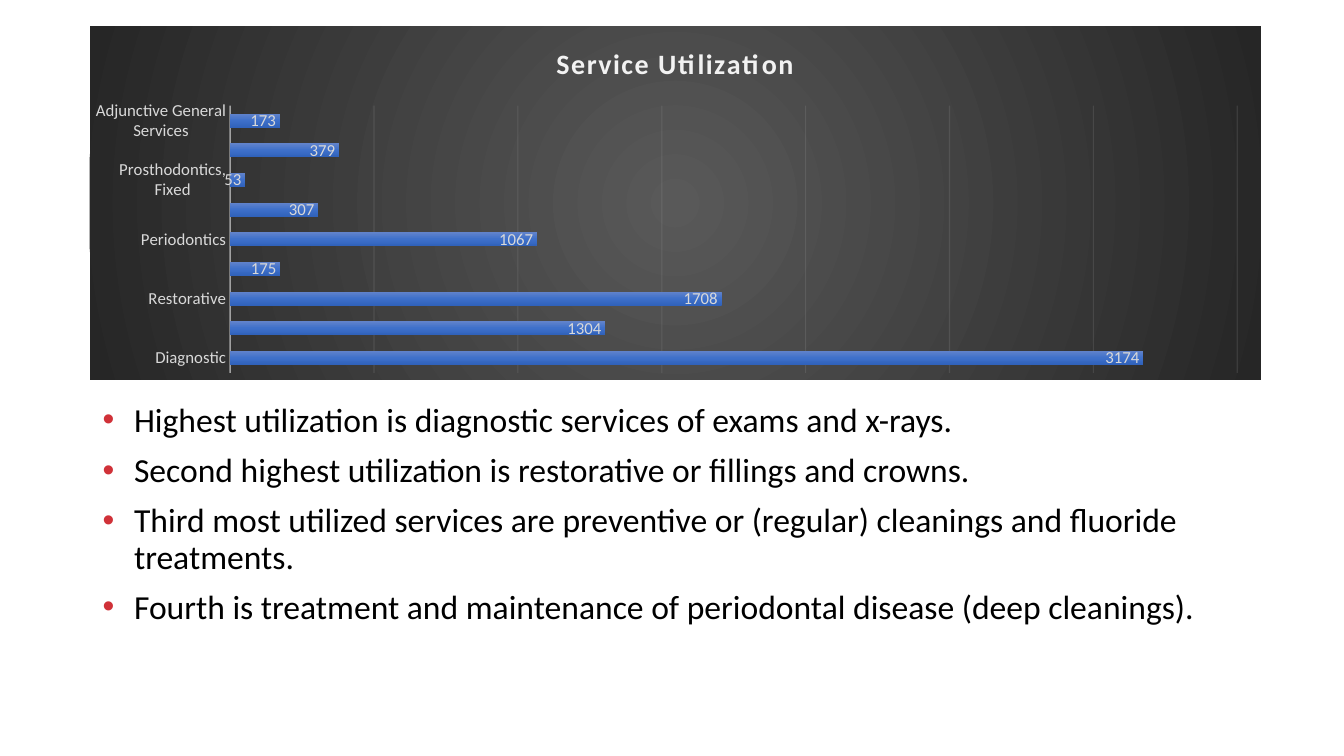
from lxml import etree
from pptx import Presentation
from pptx.chart.data import CategoryChartData
from pptx.dml.color import RGBColor
from pptx.enum.chart import XL_CHART_TYPE as ChartType, XL_LABEL_POSITION as LabelPos
from pptx.enum.chart import XL_TICK_LABEL_POSITION as TickLabels, XL_TICK_MARK as TickMark
from pptx.oxml import parse_xml
from pptx.oxml.ns import nsdecls, qn
from pptx.util import Pt

FONT = "Calibri"
COLORS = {
    "text": "000000", "bullet": "D03138", "label": "D9D9D9", "light": "F2F2F2",
    "panel_center": "595959", "panel_edge": "262626",
    "bar_top": "6183CB", "bar_middle": "3E70CA", "bar_bottom": "3062BB",
}
SERVICES = [
    ("Diagnostic", 3174),
    ("Preventive", 1304),
    ("Restorative", 1708),
    ("Endodontics", 175),
    ("Periodontics", 1067),
    ("Prosthodontics, Removable", 307),
    ("Prosthodontics, Fixed", 53),
    ("Oral & Maxillofacial Surgery", 379),
    ("Adjunctive General Services", 173),
]
FINDINGS = [
    "Highest utilization is diagnostic services of exams and x-rays.",
    "Second highest utilization is restorative or fillings and crowns.",
    "Third most utilized services are preventive or (regular) cleanings and fluoride treatments.",
    "Fourth is treatment and maintenance of periodontal disease (deep cleanings).",
]


def set_font(font, size, color, bold=False):
    """Apply the slide's typeface with a size, colour and weight."""
    font.name = FONT
    font.size = Pt(size)
    font.bold = bold
    font.color.rgb = RGBColor.from_string(COLORS[color])


def gradient(names, direction):
    """Return a gradient fill with evenly spaced stops."""
    step = 100000 // (len(names) - 1)
    stops = "".join(
        f'<a:gs pos="{i * step}"><a:srgbClr val="{COLORS[name]}"/></a:gs>'
        for i, name in enumerate(names))
    return parse_xml(f'<a:gradFill {nsdecls("a")} rotWithShape="1">'
                     f"<a:gsLst>{stops}</a:gsLst>{direction}</a:gradFill>")


def style_line(line, width, color, opacity):
    """Give a chart line its width, colour and opacity in percent."""
    line.width = Pt(width)
    line.color.rgb = RGBColor.from_string(COLORS[color])
    for rgb in line._ln.iter(qn("a:srgbClr")):
        etree.SubElement(rgb, qn("a:alpha"), val=str(opacity * 1000))


def fill_panel(chart):
    """Fill the chart background with a radial gradient."""
    panel = parse_xml(f'<c:spPr {nsdecls("c", "a")}><a:ln><a:noFill/></a:ln></c:spPr>')
    radial = ('<a:path path="circle">'
              '<a:fillToRect l="50000" t="50000" r="50000" b="50000"/></a:path>')
    panel.insert(0, gradient(["panel_center", "panel_edge"], radial))
    chart._chartSpace.find(qn("c:chart")).addnext(panel)


def place_plot(chart, x, y, width, height):
    """Fix the inner plot area as fractions of the chart."""
    area = chart._chartSpace.find(".//" + qn("c:plotArea"))
    for old in area.findall(qn("c:layout")):
        area.remove(old)
    places = "".join(f'<c:{tag} val="{value}"/>' for tag, value in
                     [("x", x), ("y", y), ("w", width), ("h", height)])
    area.insert(0, parse_xml(
        f'<c:layout {nsdecls("c")}><c:manualLayout><c:layoutTarget val="inner"/>'
        f'<c:xMode val="edge"/><c:yMode val="edge"/>{places}</c:manualLayout></c:layout>'))


def style_axes(chart):
    """Format the service names and the unlabelled value scale."""
    services, counts = chart.category_axis, chart.value_axis
    for axis in (services, counts):
        axis.major_tick_mark = axis.minor_tick_mark = TickMark.NONE
        set_font(axis.tick_labels.font, 12, "label")
    style_line(services.format.line, 1, "light", 54)
    counts.minimum_scale, counts.maximum_scale, counts.major_unit = 0, 3500, 500
    counts.tick_label_position = TickLabels.NONE
    counts.format.line.fill.background()
    style_line(counts.major_gridlines.format.line, 0.75, "light", 10)


def style_bars(plot):
    """Format the bars and their value labels."""
    plot.gap_width, plot.overlap, plot.vary_by_categories = 115, -20, False
    bars = plot.series[0]
    bars.invert_if_negative = False
    bars._element.get_or_add_spPr().insert(0, gradient(
        ["bar_top", "bar_middle", "bar_bottom"], '<a:lin ang="5400000" scaled="0"/>'))
    values = bars.data_labels
    values.show_value = True
    values.position = LabelPos.INSIDE_END
    set_font(values.font, 12, "label")


def add_utilization_chart(slide):
    """Add the bar chart of service counts."""
    data = CategoryChartData()
    data.categories = [name for name, _ in SERVICES]
    data.add_series("Series 1", [count for _, count in SERVICES])
    chart = slide.shapes.add_chart(
        ChartType.BAR_CLUSTERED, Pt(64), Pt(18.7), Pt(836.6), Pt(252.7), data).chart
    set_font(chart.font, 10, "text")
    chart.has_legend = False
    chart.has_title = True
    heading = chart.chart_title.text_frame
    heading.text = "Service Utilization"
    set_font(heading.paragraphs[0].font, 20, "light", bold=True)
    heading.paragraphs[0].font._element.set("spc", "100")
    chart.chart_title.include_in_layout = False
    fill_panel(chart)
    place_plot(chart, 0.12, 0.225, 0.86, 0.755)
    style_axes(chart)
    style_bars(chart.plots[0])


def add_bullet(paragraph):
    """Give a paragraph a hanging coloured bullet."""
    props = paragraph._p.get_or_add_pPr()
    props.set("marL", str(Pt(22.5)))
    props.set("indent", str(-Pt(22.5)))
    color = etree.SubElement(props, qn("a:buClr"))
    etree.SubElement(color, qn("a:srgbClr"), val=COLORS["bullet"])
    etree.SubElement(props, qn("a:buFont"), typeface="Arial")
    etree.SubElement(props, qn("a:buChar"), char="•")


def add_findings(slide):
    """Add the bulleted findings below the chart."""
    frame = slide.shapes.add_textbox(Pt(66.2), Pt(284.4), Pt(828), Pt(179.3)).text_frame
    frame.word_wrap = True
    for i, finding in enumerate(FINDINGS):
        paragraph = frame.add_paragraph() if i else frame.paragraphs[0]
        paragraph.text = finding
        add_bullet(paragraph)
        paragraph.line_spacing = 0.9
        if i:
            paragraph.space_before = Pt(10)
        set_font(paragraph.font, 24, "text")


def main():
    """Build and save the slide."""
    deck = Presentation()
    deck.slide_width, deck.slide_height = Pt(960), Pt(540)
    slide = deck.slides.add_slide(deck.slide_layouts.get_by_name("Blank"))
    add_utilization_chart(slide)
    add_findings(slide)
    deck.save("out.pptx")


if __name__ == "__main__":
    main()
